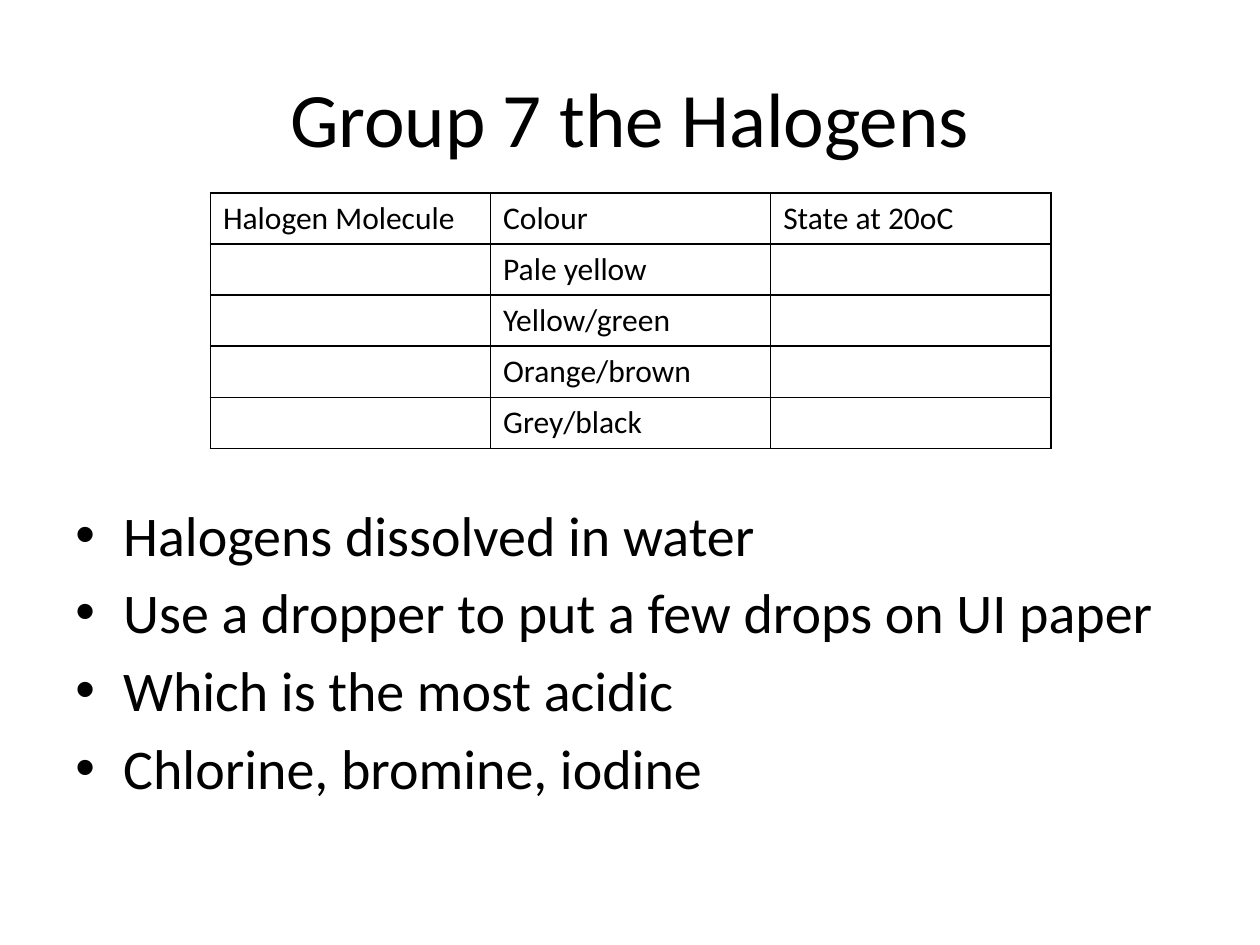
from dataclasses import dataclass

from lxml import etree
from pptx import Presentation
from pptx.dml.color import RGBColor
from pptx.enum.text import MSO_ANCHOR, PP_ALIGN
from pptx.oxml.ns import qn
from pptx.util import Inches, Pt

LEFT, CENTER = PP_ALIGN.LEFT, PP_ALIGN.CENTER
TOP, MIDDLE = MSO_ANCHOR.TOP, MSO_ANCHOR.MIDDLE
COLORS = {"text": "000000", "border": "000000"}
FONT = "Calibri"
BLANK_LAYOUT = 6


@dataclass
class TextBlock:
    left: float
    top: float
    width: float
    height: float
    lines: list[str]
    size: float
    align: PP_ALIGN = LEFT
    anchor: MSO_ANCHOR = TOP
    bulleted: bool = False


TEXT_BLOCKS = [
    TextBlock(0.5, 0.3, 9, 1.25, ["Group 7 the Halogens"], 44, CENTER, MIDDLE),
    TextBlock(
        0.5, 3.92, 9, 2.78,
        [
            "Halogens dissolved in water",
            "Use a dropper to put a few drops on UI paper",
            "Which is the most acidic",
            "Chlorine, bromine, iodine",
        ],
        32, bulleted=True,
    ),
]

HALOGEN_ROWS = [
    ["Halogen Molecule", "Colour", "State at 20oC"],
    ["", "Pale yellow", ""],
    ["", "Yellow/green", ""],
    ["", "Orange/brown", ""],
    ["", "Grey/black", ""],
]


def style_font(font, size: float) -> None:
    formats = {"name": FONT, "size": Pt(size), "bold": False}
    for name, value in formats.items():
        setattr(font, name, value)
    font.color.rgb = RGBColor.from_string(COLORS["text"])


def add_bullet(p) -> None:
    """Give the paragraph a round bullet with a hanging indent."""
    p.space_before = Pt(6)
    pPr = p._p.get_or_add_pPr()
    pPr.set("marL", str(Inches(0.38)))
    pPr.set("indent", str(-Inches(0.38)))
    etree.SubElement(pPr, qn("a:buFont"), typeface="Arial")
    etree.SubElement(pPr, qn("a:buChar"), char="•")


def add_text_block(s, block: TextBlock) -> None:
    box = (block.left, block.top, block.width, block.height)
    tf = s.shapes.add_textbox(*map(Inches, box)).text_frame
    tf.word_wrap = True
    tf.vertical_anchor = block.anchor
    for i, line in enumerate(block.lines):
        p = tf.add_paragraph() if i else tf.paragraphs[0]
        p.alignment = block.align
        if block.bulleted:
            add_bullet(p)
        r = p.add_run()
        r.text = line
        style_font(r.font, block.size)


def add_borders(cell) -> None:
    tcPr = cell._tc.get_or_add_tcPr()
    for side in ("lnL", "lnR", "lnT", "lnB"):
        line = etree.SubElement(tcPr, qn(f"a:{side}"), w=str(Pt(1)))
        fill = etree.SubElement(line, qn("a:solidFill"))
        etree.SubElement(fill, qn("a:srgbClr"), val=COLORS["border"])


def add_halogen_table(s, rows: list[list[str]]) -> None:
    box = map(Inches, (1.67, 1.53, 6.67, 2.03))
    table = s.shapes.add_table(len(rows), len(rows[0]), *box).table
    table.first_row = table.horz_banding = False
    for row, texts in zip(table.rows, rows):
        for cell, text in zip(row.cells, texts):
            add_borders(cell)
            cell.fill.background()
            p = cell.text_frame.paragraphs[0]
            if text:
                r = p.add_run()
                r.text = text
                style_font(r.font, 18)


def main() -> None:
    prs = Presentation()
    prs.slide_width, prs.slide_height = Inches(10), Inches(7.5)
    s = prs.slides.add_slide(prs.slide_layouts[BLANK_LAYOUT])
    for block in TEXT_BLOCKS:
        add_text_block(s, block)
    add_halogen_table(s, HALOGEN_ROWS)
    prs.save("out.pptx")


if __name__ == "__main__":
    main()
